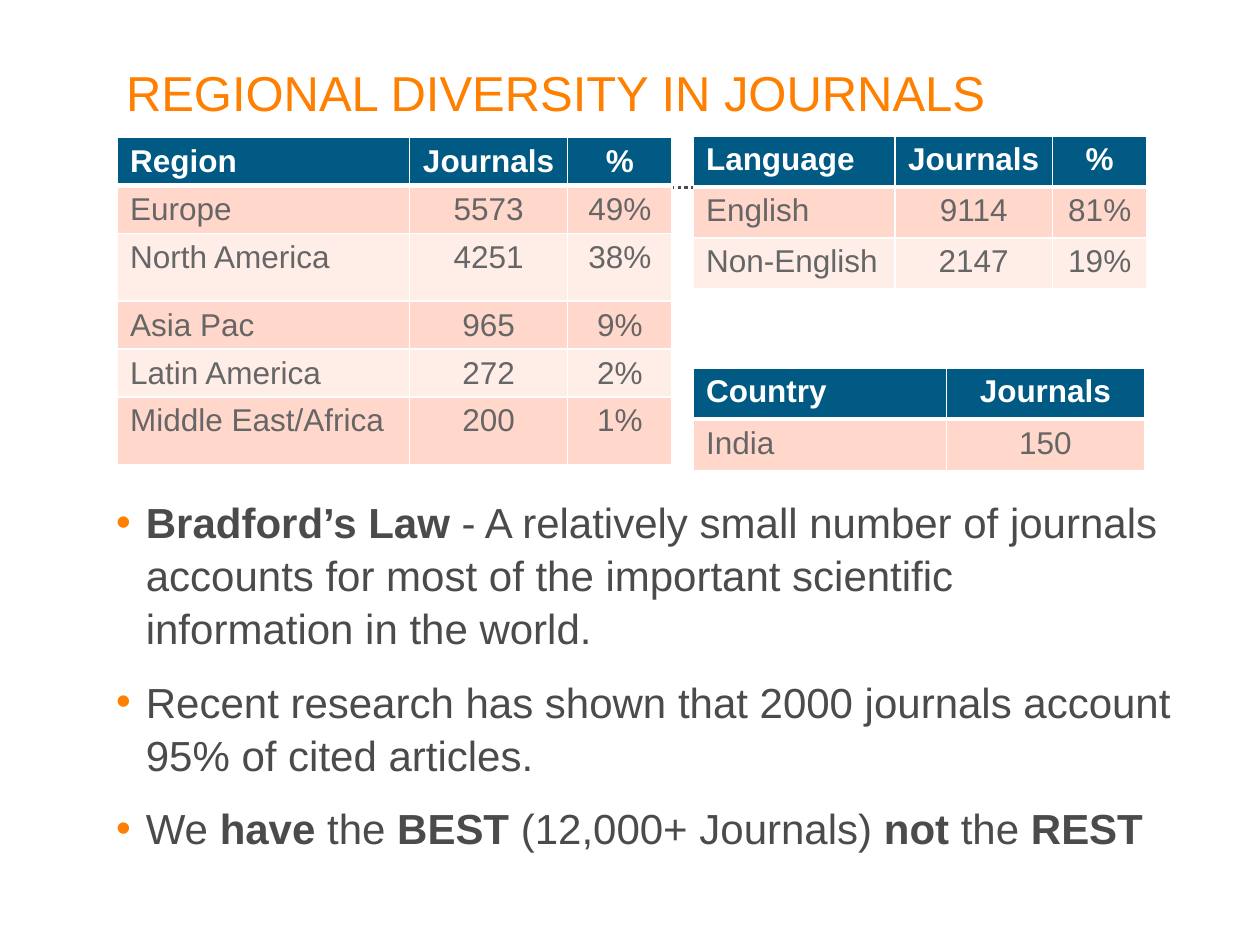
from dataclasses import dataclass

import lxml.etree
import pptx
import pptx.dml.color
import pptx.enum.dml
import pptx.enum.shapes
import pptx.enum.text
import pptx.oxml.ns
import pptx.util

Cm = pptx.util.Cm
Pt = pptx.util.Pt
qn = pptx.oxml.ns.qn


@dataclass(frozen=True)
class Theme:
    font: str = "Arial"
    accent: str = "FF8000"
    body: str = "4B4B4B"
    header: str = "005A84"
    cell: str = "666666"
    white: str = "FFFFFF"
    bands: tuple = ("FFD8CB", "FFEDE7")
    title_size: int = 28
    body_size: int = 24
    table_size: int = 18


def rgb(value):
    return pptx.dml.color.RGBColor.from_string(value)


def add_color(parent, tag, value):
    holder = lxml.etree.SubElement(parent, qn(tag))
    lxml.etree.SubElement(holder, qn("a:srgbClr"), val=value)


class SlideBuilder:
    def __init__(self, slide, theme):
        self.slide = slide
        self.theme = theme

    def style(self, paragraph, size, color, bold=False):
        font = paragraph.font
        font.name = self.theme.font
        font.size = Pt(size)
        font.bold = bold
        font.color.rgb = rgb(color)

    def place(self, placeholder, left, top, width, height, right_inset=0):
        placeholder.left, placeholder.top = Cm(left), Cm(top)
        placeholder.width, placeholder.height = Cm(width), Cm(height)
        frame = placeholder.text_frame
        frame.word_wrap = True
        frame.auto_size = pptx.enum.text.MSO_AUTO_SIZE.NONE
        frame.margin_left = frame.margin_top = frame.margin_bottom = 0
        frame.margin_right = Cm(right_inset)
        return frame

    def title(self, text, *box):
        frame = self.place(self.slide.shapes.title, *box)
        frame.vertical_anchor = pptx.enum.text.MSO_ANCHOR.BOTTOM
        frame.text = text
        heading = frame.paragraphs[0]
        heading.alignment = pptx.enum.text.PP_ALIGN.LEFT
        heading.line_spacing = 0.9
        self.style(heading, self.theme.title_size, self.theme.accent)

    def bullets(self, points, *box):
        frame = self.place(self.slide.placeholders[1], *box, right_inset=0.51)
        frame.vertical_anchor = pptx.enum.text.MSO_ANCHOR.TOP
        for index, point in enumerate(points):
            paragraph = frame.add_paragraph() if index else frame.paragraphs[0]
            paragraph.space_before = Pt(12 if index else 0)
            paragraph.line_spacing = 1.05
            properties = paragraph._p.get_or_add_pPr()
            properties.set("marL", str(Cm(0.6)))
            properties.set("indent", str(-Cm(0.6)))
            add_color(properties, "a:buClr", self.theme.accent)
            lxml.etree.SubElement(properties, qn("a:buFont"), typeface=self.theme.font)
            lxml.etree.SubElement(properties, qn("a:buChar"), char="•")
            self.style(paragraph, self.theme.body_size, self.theme.body)
            for position, part in enumerate(point.split("*")):
                if part:
                    run = paragraph.add_run()
                    run.text = part
                    if position % 2:
                        run.font.bold = True

    def dotted_rule(self, left, right, top):
        rule = self.slide.shapes.add_connector(
            pptx.enum.shapes.MSO_CONNECTOR.STRAIGHT,
            Cm(left), Cm(top), Cm(right), Cm(top))
        rule.line.color.rgb = rgb(self.theme.body)
        rule.line.width = Pt(1.9)
        rule.line.dash_style = pptx.enum.dml.MSO_LINE.ROUND_DOT
        lxml.etree.SubElement(rule._element.spPr, qn("a:effectLst"))

    def borders(self, cell, row):
        properties = cell._tc.get_or_add_tcPr()
        widths = {"L": 1, "R": 1, "T": 3 if row == 1 else 1, "B": 1 if row else 3}
        for side, width in widths.items():
            border = lxml.etree.SubElement(
                properties, qn(f"a:ln{side}"), w=str(Pt(width)))
            add_color(border, "a:solidFill", self.theme.white)

    def table(self, records, left, top, widths, heights):
        theme = self.theme
        table = self.slide.shapes.add_table(
            len(records), len(widths), Cm(left), Cm(top),
            Cm(sum(widths)), Cm(sum(heights))).table
        table.horz_banding = False
        for column, width in zip(table.columns, widths):
            column.width = Cm(width)
        for row, (record, height) in enumerate(zip(records, heights)):
            table.rows[row].height = Cm(height)
            for column, value in enumerate(record):
                cell = table.cell(row, column)
                self.borders(cell, row)
                cell.fill.solid()
                cell.fill.fore_color.rgb = rgb(
                    theme.bands[(row - 1) % 2] if row else theme.header)
                cell.text = value
                entry = cell.text_frame.paragraphs[0]
                if column:
                    entry.alignment = pptx.enum.text.PP_ALIGN.CENTER
                self.style(entry, theme.table_size,
                           theme.cell if row else theme.white, bold=row == 0)


REGIONS = [
    ("Region", "Journals", "%"),
    ("Europe", "5573", "49%"),
    ("North America", "4251", "38%"),
    ("Asia Pac", "965", "9%"),
    ("Latin America", "272", "2%"),
    ("Middle East/Africa", "200", "1%"),
]
LANGUAGES = [
    ("Language", "Journals", "%"),
    ("English", "9114", "81%"),
    ("Non-English", "2147", "19%"),
]
COUNTRIES = [("Country", "Journals"), ("India", "150")]
POINTS = [
    "*Bradford’s Law* - A relatively small number of journals accounts for "
    "most of the important scientific information in the world.",
    "Recent research has shown that 2000 journals account 95% of cited articles.",
    "We *have* the *BEST* (12,000+ Journals) *not* the *REST*",
]


def main():
    presentation = pptx.Presentation()
    presentation.slide_width, presentation.slide_height = Cm(25.4), Cm(19.05)
    slide = presentation.slides.add_slide(presentation.slide_layouts[1])
    builder = SlideBuilder(slide, Theme())
    builder.title("REGIONAL DIVERSITY IN JOURNALS", 2.54, 1.07, 20.47, 1.4)
    builder.bullets(POINTS, 2.34, 9.96, 21.79, 6.98)
    builder.dotted_rule(2.54, 23.01, 3.78)
    builder.table(REGIONS, 2.37, 2.77, (5.89, 3.18, 2.11),
                  (0.96, 0.96, 1.37, 0.96, 0.96, 1.37))
    builder.table(LANGUAGES, 13.98, 2.74, (4.06, 3.18, 1.9), [1.03] * 3)
    builder.table(COUNTRIES, 13.98, 7.42, (5.1, 3.99), [1.03] * 2)
    presentation.save("out.pptx")


if __name__ == "__main__":
    main()
